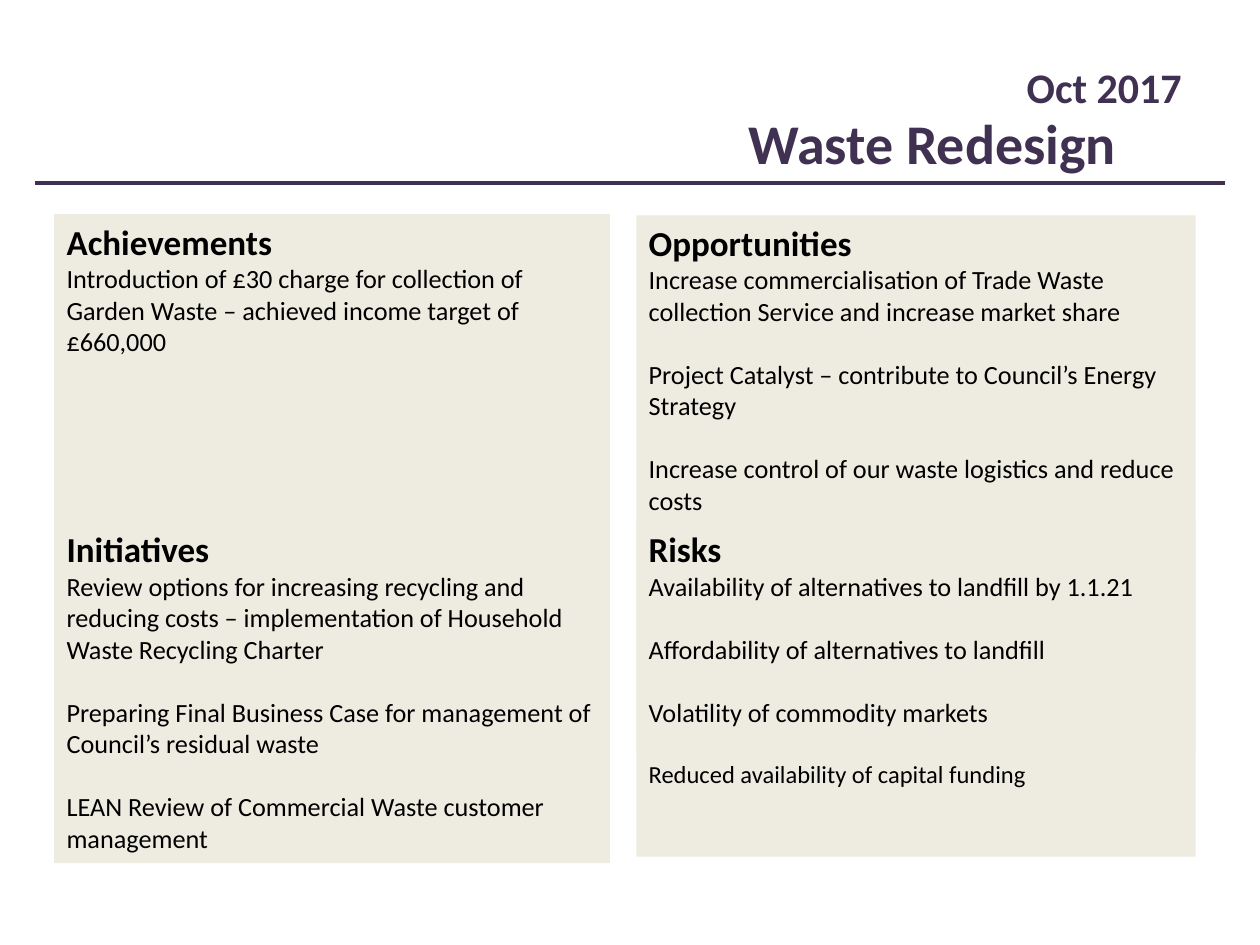
from lxml import etree
from pptx import Presentation
from pptx import util as u
from pptx.dml import color
from pptx.enum import shapes, text
from pptx.oxml import ns

PURPLE, BEIGE, BLACK = "403152", "EEECE1", "000000"
LEFT, RIGHT = (0.43, 4.41), (5.05, 4.44)
PANELS = [
    (RIGHT, 1.71, 4.24, "Opportunities", [
        ("Increase commercialisation of Trade Waste collection Service and increase market share", 15),
        ("Project Catalyst – contribute to Council’s Energy Strategy", 15),
        ("Increase control of our waste logistics and reduce costs", 15),
    ]),
    (LEFT, 1.7, 2.89, "Achievements", [
        ("Introduction of £30 charge for collection of Garden Waste – achieved income target of £660,000", 15),
    ]),
    (LEFT, 4.14, 2.71, "Initiatives", [
        ("Review options for increasing recycling and reducing costs – implementation of "
         "Household Waste Recycling Charter", 15),
        ("Preparing Final Business Case for management of Council’s residual waste", 15),
        ("LEAN Review of Commercial Waste customer management", 15),
    ]),
    (RIGHT, 4.14, 2.66, "Risks", [
        ("Availability of alternatives to landfill by 1.1.21", 15),
        ("Affordability of alternatives to landfill", 15),
        ("Volatility of commodity markets", 15),
        ("Reduced availability of capital funding", 14),
    ]),
]


def rgb(value):
    """Turn a hex string into a colour."""
    return color.RGBColor.from_string(value)


class SlideBuilder:
    """Hold the style and the slide being built."""

    def __init__(self, slide, font="Calibri"):
        """Keep the slide and its font."""
        self.slide = slide
        self.font = font

    def add_run(self, paragraph, words, size, hex_color, bold=False):
        """Add one styled run to a left-aligned paragraph."""
        paragraph.alignment = text.PP_ALIGN.LEFT
        run = paragraph.add_run()
        run.text = words
        run.font.name = self.font
        run.font.size = u.Pt(size)
        run.font.bold = bold
        run.font.color.rgb = rgb(hex_color)

    def add_heading_line(self, shape, words, size):
        """Write one unwrapped purple line in a shape."""
        frame = shape.text_frame
        frame.word_wrap = False
        frame.auto_size = text.MSO_AUTO_SIZE.NONE
        frame.vertical_anchor = text.MSO_ANCHOR.TOP
        self.add_run(frame.paragraphs[0], words, size, PURPLE, bold=True)

    def add_title(self, words, left, top, width, height):
        """Place and fill the title placeholder."""
        title = self.slide.shapes.title
        title.left, title.top = u.Inches(left), u.Inches(top)
        title.width, title.height = u.Inches(width), u.Inches(height)
        self.add_heading_line(title, words, 32)

    def add_date(self, words, left, top, width, height):
        """Add the date above the title."""
        box = self.slide.shapes.add_textbox(
            u.Inches(left), u.Inches(top), u.Inches(width), u.Inches(height))
        self.add_heading_line(box, words, 24)

    def add_rule(self, start, end, top):
        """Draw the horizontal rule under the title."""
        rule = self.slide.shapes.add_connector(
            shapes.MSO_CONNECTOR.STRAIGHT,
            u.Inches(start), u.Inches(top), u.Inches(end), u.Inches(top))
        rule.line.color.rgb = rgb(PURPLE)
        rule.line.width = u.Pt(2.5)
        etree.SubElement(rule._element.spPr, ns.qn("a:effectLst"))

    def add_panel(self, column, top, height, heading, items):
        """Add a filled panel with a heading and spaced items."""
        left, width = column
        panel = self.slide.shapes.add_shape(
            shapes.MSO_SHAPE.RECTANGLE,
            u.Inches(left), u.Inches(top), u.Inches(width), u.Inches(height))
        panel.shadow.inherit = False
        panel.fill.solid()
        panel.fill.fore_color.rgb = rgb(BEIGE)
        panel.line.fill.background()
        frame = panel.text_frame
        frame.word_wrap = True
        frame.vertical_anchor = text.MSO_ANCHOR.TOP
        self.add_run(frame.paragraphs[0], heading, 20, BLACK, bold=True)
        for index, (words, size) in enumerate(items):
            paragraph = frame.add_paragraph()
            paragraph.space_before = u.Pt(18 if index else 0)
            self.add_run(paragraph, words, size, BLACK)


def main():
    """Build and save the slide."""
    presentation = Presentation()
    presentation.slide_width = u.Inches(10)
    presentation.slide_height = u.Inches(7.5)
    slide = presentation.slides.add_slide(presentation.slide_layouts.get_by_name("Title Only"))
    builder = SlideBuilder(slide)
    builder.add_title("Waste Redesign", 5.84, 0.81, 3.25, 0.64)
    builder.add_rule(0.28, 9.72, 1.45)
    builder.add_date("Oct 2017", 8.05, 0.44, 1.44, 0.5)
    for panel in PANELS:
        builder.add_panel(*panel)
    presentation.save("out.pptx")


if __name__ == "__main__":
    main()
